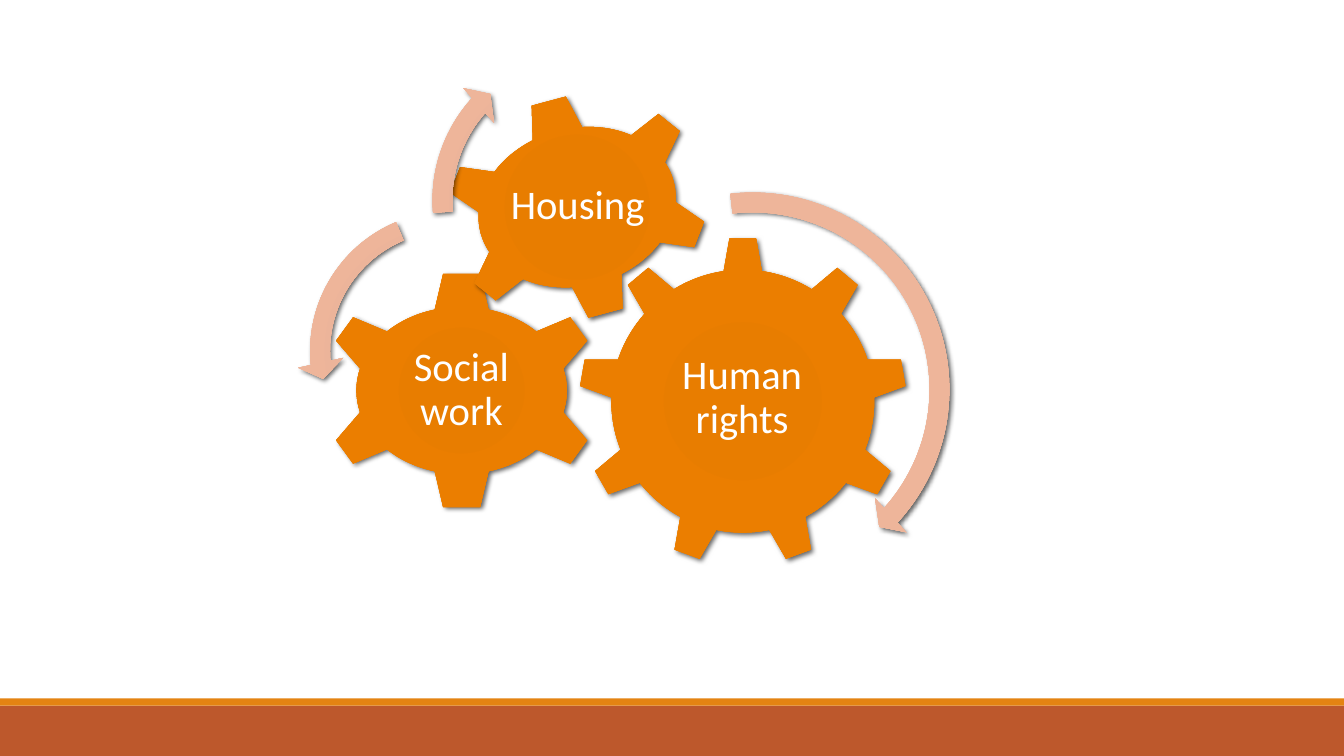
from lxml import etree
from pptx import Presentation
from pptx import util as u
from pptx.dml.color import RGBColor
from pptx.enum import shapes, text
from pptx.oxml import parse_xml
from pptx.oxml.ns import nsdecls, qn

SHAPE = shapes.MSO_SHAPE
ORANGE = ((0, "E57B00"), (34, "E87D00"), (70, "EB7E00"), (100, "EF8407"))
PEACH = ((0, "E8B196"), (34, "E9B399"), (70, "EEB59A"), (100, "F3C0A8"))


def color(hex_value):
    return RGBColor.from_string(hex_value)


class GearSlide:
    font = "Calibri"
    size = u.Pt(29)
    text_color = "FFFFFF"
    inset = u.Cm(0.1)

    def __init__(self, slide):
        self.slide = slide

    def shape(self, kind, box):
        part = self.slide.shapes.add_shape(kind, *map(u.Cm, box))
        part.shadow.inherit = False
        part.line.fill.background()
        return part

    def band(self, box, fill):
        band = self.shape(SHAPE.RECTANGLE, box)
        band.fill.solid()
        band.fill.fore_color.rgb = color(fill)

    def glow(self, part, stops):
        part.fill.background()
        props = part._element.spPr
        stop_xml = "".join(
            f'<a:gs pos="{pos * 1000}"><a:srgbClr val="{shade}"/></a:gs>'
            for pos, shade in stops)
        gradient = parse_xml(
            f'<a:gradFill {nsdecls("a")} rotWithShape="1"><a:gsLst>{stop_xml}</a:gsLst>'
            '<a:path path="circle"><a:fillToRect l="100000" t="100000" '
            'r="100000" b="100000"/></a:path></a:gradFill>')
        props.replace(props.find(qn("a:noFill")), gradient)
        shadow = etree.SubElement(
            props.find(qn("a:effectLst")), qn("a:outerShdw"),
            blurRad=str(u.Pt(3.5)), dist=str(u.Pt(2)), dir="2700000",
            algn="ctr", rotWithShape="0")
        shade = etree.SubElement(shadow, qn("a:srgbClr"), val="000000")
        etree.SubElement(shade, qn("a:alpha"), val="60000")

    def gear(self, kind, box, label, label_box, rotation=0):
        gear = self.shape(kind, box)
        gear.rotation = rotation
        self.glow(gear, ORANGE)
        self.label(label, label_box)

    def label(self, wording, box):
        frame = self.slide.shapes.add_textbox(*map(u.Cm, box)).text_frame
        frame.word_wrap = True
        frame.vertical_anchor = text.MSO_ANCHOR.MIDDLE
        frame.margin_left = frame.margin_right = self.inset
        frame.margin_top = frame.margin_bottom = self.inset
        paragraph = frame.paragraphs[0]
        paragraph.alignment = text.PP_ALIGN.CENTER
        paragraph.line_spacing = 0.9
        run = paragraph.add_run()
        run.text = wording
        run.font.name = self.font
        run.font.size = self.size
        run.font.color.rgb = color(self.text_color)

    def arrow(self, kind, left, top, diameter, thickness, angles, head):
        arrow = self.shape(kind, (left, top, diameter, diameter))
        settings = [thickness / 100, *(angle * 0.6 for angle in angles), head / 100]
        for index, setting in enumerate(settings):
            arrow.adjustments[index] = setting
        self.glow(arrow, PEACH)


def main():
    deck = Presentation()
    deck.slide_width, deck.slide_height = u.Cm(33.87), u.Cm(19.05)
    page = GearSlide(deck.slides.add_slide(deck.slide_layouts[6]))

    page.band((0, 17.78, 33.87, 1.27), "BD582C")
    page.band((0, 17.6, 33.87, 0.18), "E48312")

    page.gear(SHAPE.GEAR_9, (14.58, 5.97, 8.28, 8.28),
              "Human rights", (16.23, 7.9, 4.95, 4.27))
    page.gear(SHAPE.GEAR_6, (8.08, 6.83, 7.11, 6.02),
              "Social work", (9.75, 8.36, 3.76, 2.97))
    page.gear(SHAPE.GEAR_6, (11.18, 2.39, 6.73, 5.66),
              "Housing", (12.73, 3.56, 3.66, 3.3), rotation=345)

    page.arrow(SHAPE.CIRCULAR_ARROW, 13.67, 4.52, 10.59,
               4.7, (4.98, 42.32, 263.54), 5.5)
    page.arrow(SHAPE.LEFT_CIRCULAR_ARROW, 7.49, 5, 7.7,
               6.5, (7.17, 174.82, 247.3), 7.5)
    page.arrow(SHAPE.CIRCULAR_ARROW, 10.57, 0.89, 8.31,
               6, (6.57, 221.9, 175.14), 7)

    deck.save("out.pptx")


if __name__ == "__main__":
    main()
